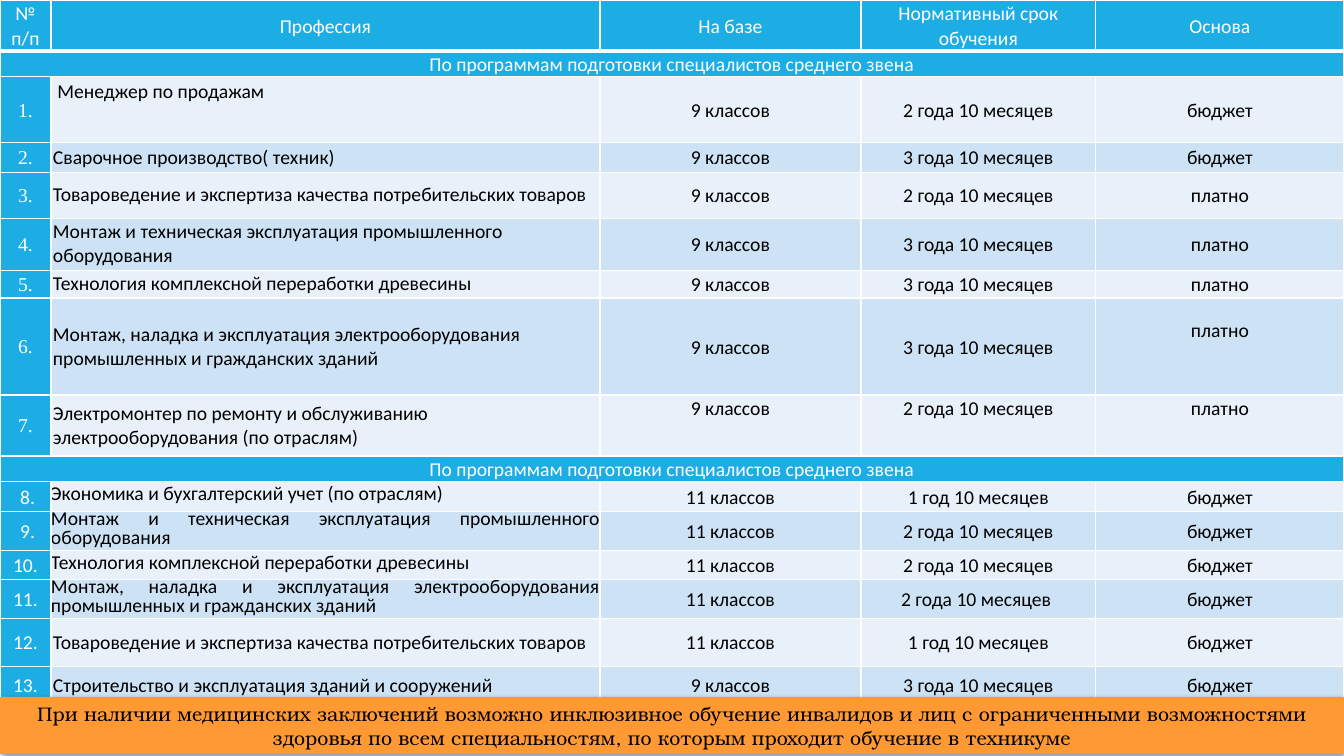
from dataclasses import dataclass

from lxml.etree import SubElement
from pptx import Presentation
from pptx.dml.color import RGBColor
from pptx.enum.shapes import MSO_SHAPE
from pptx.enum.text import MSO_ANCHOR, PP_ALIGN
from pptx.oxml.ns import qn
from pptx.util import Emu, Pt


@dataclass(frozen=True)
class Theme:
    accent: str = "1CADE4"
    bands: tuple = ("E8F1FA", "CDE3F5")
    banner: str = "FF9933"
    white: str = "FFFFFF"
    black: str = "000000"
    body: str = "Calibri"
    numerals: str = "Times New Roman"
    banner_font: str = "TeX Gyre Bonum"
    size: int = 14
    spacing: float = 1.07


THEME = Theme()
SLIDE_WIDTH, SLIDE_HEIGHT = 1344, 756
COLUMN_WIDTHS = (51, 549, 261, 235, 248)
HEADINGS = ("№ п/п", "Профессия", "На базе", "Нормативный срок обучения", "Основа")
HEADING_HEIGHT, SECTION_HEIGHT = 50, 25
SECTION = "По программам подготовки специалистов среднего звена"
NOTICE = ("При наличии медицинских заключений возможно инклюзивное обучение инвалидов и лиц "
          "с ограниченными возможностями здоровья по всем специальностям, по которым проходит "
          "обучение в техникуме")

# Line spacing and side margin of the profession column
LOOSE = (THEME.spacing, 2)
PLAIN = (1.0, 2)
TIGHT = (Pt(13.7), 0)

# Row height, profession style, texts of the five columns
AFTER_NINE = (
    (66, LOOSE, "1.", " Менеджер по продажам", "9 классов", "2 года 10 месяцев", "бюджет"),
    (29, LOOSE, "2.", "Сварочное производство( техник)", "9 классов", "3 года 10 месяцев", "бюджет"),
    (46, PLAIN, "3.", "Товароведение и экспертиза качества потребительских товаров",
     "9 классов", "2 года 10 месяцев", "платно"),
    (52, PLAIN, "4.", "Монтаж и техническая эксплуатация промышленного оборудования",
     "9 классов", "3 года 10 месяцев", "платно"),
    (27, PLAIN, "5.", "Технология комплексной переработки древесины",
     "9 классов", "3 года 10 месяцев", "платно"),
    (97, PLAIN, "6.", "Монтаж, наладка и эксплуатация электрооборудования промышленных и гражданских зданий",
     "9 классов", "3 года 10 месяцев", "платно"),
    (61, PLAIN, "7.", "Электромонтер по ремонту и обслуживанию электрооборудования (по отраслям)",
     "9 классов", "2 года 10 месяцев", "платно"),
)
AFTER_ELEVEN = (
    (30, TIGHT, " 8.", "Экономика и бухгалтерский учет (по отраслям)",
     "11 классов", "1 год 10 месяцев", "бюджет"),
    (39, TIGHT, " 9.", "Монтаж и техническая эксплуатация промышленного оборудования",
     "11 классов", "2 года 10 месяцев", "бюджет"),
    (29, TIGHT, "10.", "Технология комплексной переработки древесины",
     "11 классов", "2 года 10 месяцев", "бюджет"),
    (39, TIGHT, "11.", "Монтаж, наладка и эксплуатация электрооборудования промышленных и гражданских зданий",
     "11 классов", "2 года 10 месяцев ", "бюджет"),
    (48, LOOSE, "12.", "Товароведение и экспертиза качества потребительских товаров",
     "11 классов", "1 год 10 месяцев", "бюджет"),
    (37, LOOSE, "13.", "Строительство и эксплуатация зданий и сооружений",
     "9 классов", "3 года 10 месяцев", "бюджет"),
)
GROUPS = ((AFTER_NINE, THEME.numerals), (AFTER_ELEVEN, THEME.body))


def px(length):
    return Emu(round(length * 914400 / 100.8))


def color(value):
    return RGBColor.from_string(value)


def format_text(frame, font, text_color, align, spacing):
    para = frame.paragraphs[0]
    para.alignment = align
    para.line_spacing = spacing
    for span in para.runs:
        span.font.name = font
        span.font.size = Pt(THEME.size)
        span.font.bold = False
        span.font.color.rgb = color(text_color)


def add_borders(cell, bottom):
    properties = cell._tc.get_or_add_tcPr()
    for side, width in (("L", 1), ("R", 1), ("T", 1), ("B", bottom)):
        line = SubElement(properties, qn(f"a:ln{side}"), w=str(Pt(width)))
        fill = SubElement(line, qn("a:solidFill"))
        SubElement(fill, qn("a:srgbClr"), val=THEME.white)


def fill_cell(cell, text, fill, text_color=THEME.black, font=THEME.body, align=PP_ALIGN.CENTER,
              spacing=THEME.spacing, margin=0, anchor=MSO_ANCHOR.MIDDLE, bottom=1):
    add_borders(cell, bottom)
    cell.fill.solid()
    cell.fill.fore_color.rgb = color(fill)
    cell.margin_left = cell.margin_right = cell.margin_top = cell.margin_bottom = px(margin)
    cell.vertical_anchor = anchor
    cell.text_frame.text = text
    format_text(cell.text_frame, font, text_color, align, spacing)


def fill_headings(table):
    table.rows[0].height = px(HEADING_HEIGHT)
    for column, heading in enumerate(HEADINGS):
        fill_cell(table.cell(0, column), heading, THEME.accent, THEME.white, bottom=3)


def fill_section(table, row):
    table.rows[row].height = px(SECTION_HEIGHT)
    table.cell(row, 0).merge(table.cell(row, len(HEADINGS) - 1))
    fill_cell(table.cell(row, 0), SECTION, THEME.accent, THEME.white, anchor=MSO_ANCHOR.BOTTOM)


def fill_programme(table, row, programme, band, number_font):
    height, style, number, profession, *details = programme
    spacing, margin = style
    table.rows[row].height = px(height)
    fill_cell(table.cell(row, 0), number, THEME.accent, THEME.white, number_font)
    align = PP_ALIGN.JUSTIFY if style == TIGHT else PP_ALIGN.LEFT
    fill_cell(table.cell(row, 1), profession, band, align=align, spacing=spacing, margin=margin)
    for column, detail in enumerate(details, 2):
        fill_cell(table.cell(row, column), detail, band)


def add_programme_table(page):
    row_count = 1 + sum(1 + len(programmes) for programmes, _ in GROUPS)
    table = page.shapes.add_table(row_count, len(HEADINGS), 0, 0, px(SLIDE_WIDTH), px(695)).table
    for column, width in zip(table.columns, COLUMN_WIDTHS):
        column.width = px(width)
    fill_headings(table)
    row = 1
    for programmes, number_font in GROUPS:
        fill_section(table, row)
        for index, programme in enumerate(programmes):
            row += 1
            fill_programme(table, row, programme, THEME.bands[index % 2], number_font)
        row += 1

    # Raised texts in the first, sixth and seventh programmes
    for raised_row, column in ((2, 1), (8, 2), (8, 3), (8, 4)):
        table.cell(raised_row, column).vertical_anchor = MSO_ANCHOR.TOP
    table.cell(7, 4).margin_bottom = px(34)


def add_shadow(shape):
    effects = SubElement(shape._element.spPr, qn("a:effectLst"))
    shadow = SubElement(effects, qn("a:outerShdw"), blurRad=str(Pt(3.5)), dist=str(Pt(1.1)),
                        dir="5400000", rotWithShape="0")
    shade = SubElement(shadow, qn("a:srgbClr"), val=THEME.black)
    SubElement(shade, qn("a:alpha"), val="45000")


def add_banner(page):
    box = page.shapes.add_shape(MSO_SHAPE.RECTANGLE, 0, px(697), px(SLIDE_WIDTH), px(57))
    box.fill.solid()
    box.fill.fore_color.rgb = color(THEME.banner)
    box.line.fill.background()
    add_shadow(box)
    frame = box.text_frame
    frame.word_wrap = True
    frame.vertical_anchor = MSO_ANCHOR.MIDDLE
    frame.text = NOTICE
    format_text(frame, THEME.banner_font, THEME.black, PP_ALIGN.CENTER, 1.0)


def main():
    deck = Presentation()
    deck.slide_width, deck.slide_height = px(SLIDE_WIDTH), px(SLIDE_HEIGHT)
    page = deck.slides.add_slide(deck.slide_layouts[6])
    add_programme_table(page)
    add_banner(page)
    deck.save("out.pptx")


if __name__ == "__main__":
    main()
